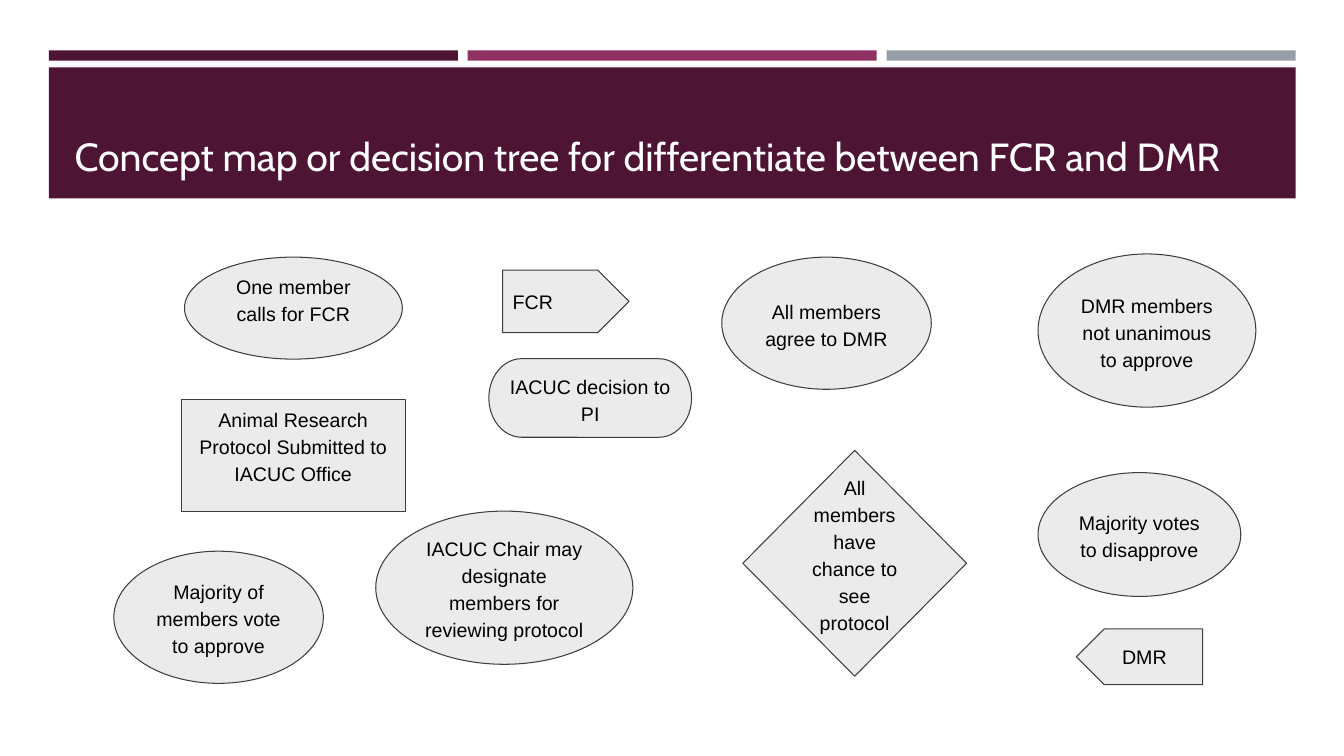
from pptx import Presentation
from pptx.dml.color import RGBColor
from pptx.enum import shapes, text
from pptx.util import Cm, Pt

PLUM = RGBColor(0x4D, 0x14, 0x34)
MAGENTA = RGBColor(0x90, 0x31, 0x63)
SLATE = RGBColor(0x96, 0x9F, 0xA7)
PALE = RGBColor(0xEB, 0xEB, 0xEB)
OUTLINE = RGBColor(0x3D, 0x3D, 0x3D)
BLACK = RGBColor(0, 0, 0)
WHITE = RGBColor(0xFF, 0xFF, 0xFF)

KIND = shapes.MSO_SHAPE
INSET = 0.25
RAISED = {"bottom": 0.75}

TITLE = "Concept map or decision tree for differentiate between FCR and DMR"

# kind, left, top, width, height in cm within the map, wording, changed insets
STEPS = [
    (KIND.RECTANGLE, 1.7, 3.66, 5.64, 2.82,
     "Animal Research Protocol Submitted to IACUC Office", RAISED),
    (KIND.FLOWCHART_TERMINATOR, 9.45, 2.64, 5.11, 1.98, "IACUC decision to PI", {}),
    (KIND.DIAMOND, 15.85, 4.95, 5.64, 5.69,
     "All members have chance to see protocol", RAISED),
    (KIND.OVAL, 0, 7.49, 5.28, 3.33, "Majority of members vote to approve", {}),
    (KIND.OVAL, 1.78, 0.08, 5.49, 2.57, "One member calls for FCR", RAISED),
    (KIND.OVAL, 23.29, 5.51, 5.11, 3.12, "Majority votes to disapprove", {}),
    (KIND.OVAL, 6.6, 6.48, 6.48, 3.86,
     "IACUC Chair may designate members for reviewing protocol", {}),
    (KIND.OVAL, 15.32, 0.08, 5.28, 3.33, "All members agree to DMR", {}),
    (KIND.OVAL, 23.29, 0, 5.49, 3.86, "DMR members not unanimous to approve", {}),
]
# left, top, height in cm within the map, wording, points left, changed insets
TAGS = [
    (9.8, 0.41, 1.57, "FCR", False, {}),
    (24.26, 9.45, 1.4, "DMR", True, {"left": 0.8}),
]


def add_filled(s, kind, left, top, width, height, color):
    sp = s.shapes.add_shape(kind, Cm(left), Cm(top), Cm(width), Cm(height))
    sp.shadow.inherit = False
    sp.fill.solid()
    sp.fill.fore_color.rgb = color
    sp.line.fill.background()
    return sp


def write(sp, wording, font, size, color, align, anchor, spacing=1, **insets):
    """Set one paragraph; insets override the common margin, in cm."""
    tf = sp.text_frame
    tf.word_wrap = True
    tf.auto_size = text.MSO_AUTO_SIZE.NONE
    tf.vertical_anchor = anchor
    for side in ("left", "top", "right", "bottom"):
        setattr(tf, "margin_" + side, Cm(insets.get(side, INSET)))
    p = tf.paragraphs[0]
    p.text = wording
    p.alignment = align
    p.line_spacing = spacing
    p.font.name = font
    p.font.size = Pt(size)
    p.font.color.rgb = color


def add_header(s, left, top, width, height):
    gap, bar_height, band_top = 0.25, 0.26, 0.43
    bar_width = (width - 2 * gap) / 3
    for i, color in enumerate((PLUM, MAGENTA, SLATE)):
        add_filled(s, KIND.RECTANGLE, left + i * (bar_width + gap), top,
                   bar_width, bar_height, color)
    add_filled(s, KIND.RECTANGLE, left, top + band_top, width, height - band_top, PLUM)

    title = s.shapes.title
    title.left, title.top = Cm(left + 0.4), Cm(top + 0.69)
    title.width, title.height = Cm(width - 0.8), Cm(height - 0.91)
    write(title, TITLE, "Cabin", 28, WHITE, text.PP_ALIGN.LEFT, text.MSO_ANCHOR.BOTTOM)
    s.shapes._spTree.append(title._element)  # in front of the band


def add_node(s, kind, left, top, width, height, wording, align, spacing, insets):
    sp = add_filled(s, kind, left, top, width, height, PALE)
    sp.line.color.rgb = OUTLINE
    sp.line.width = Pt(0.75)
    write(sp, wording, "Arial", 14, BLACK, align, text.MSO_ANCHOR.MIDDLE,
          spacing, **insets)
    return sp


def add_concept_map(s, left, top):
    for kind, x, y, width, height, wording, insets in STEPS:
        add_node(s, kind, left + x, top + y, width, height, wording,
                 text.PP_ALIGN.CENTER, 1.15, insets)
    for x, y, height, wording, points_left, insets in TAGS:
        sp = add_node(s, KIND.PENTAGON, left + x, top + y, 3.18, height, wording,
                      text.PP_ALIGN.LEFT, 1, insets)
        sp.adjustments[0] = 0.5
        if points_left:
            sp._element.spPr.xfrm.set("flipH", "1")


def main():
    prs = Presentation()
    prs.slide_width, prs.slide_height = Cm(33.87), Cm(19.05)
    s = prs.slides.add_slide(prs.slide_layouts[5])
    add_header(s, 1.23, 1.27, 31.42, 3.73)
    add_concept_map(s, 2.87, 6.4)
    prs.save("out.pptx")


if __name__ == "__main__":
    main()
